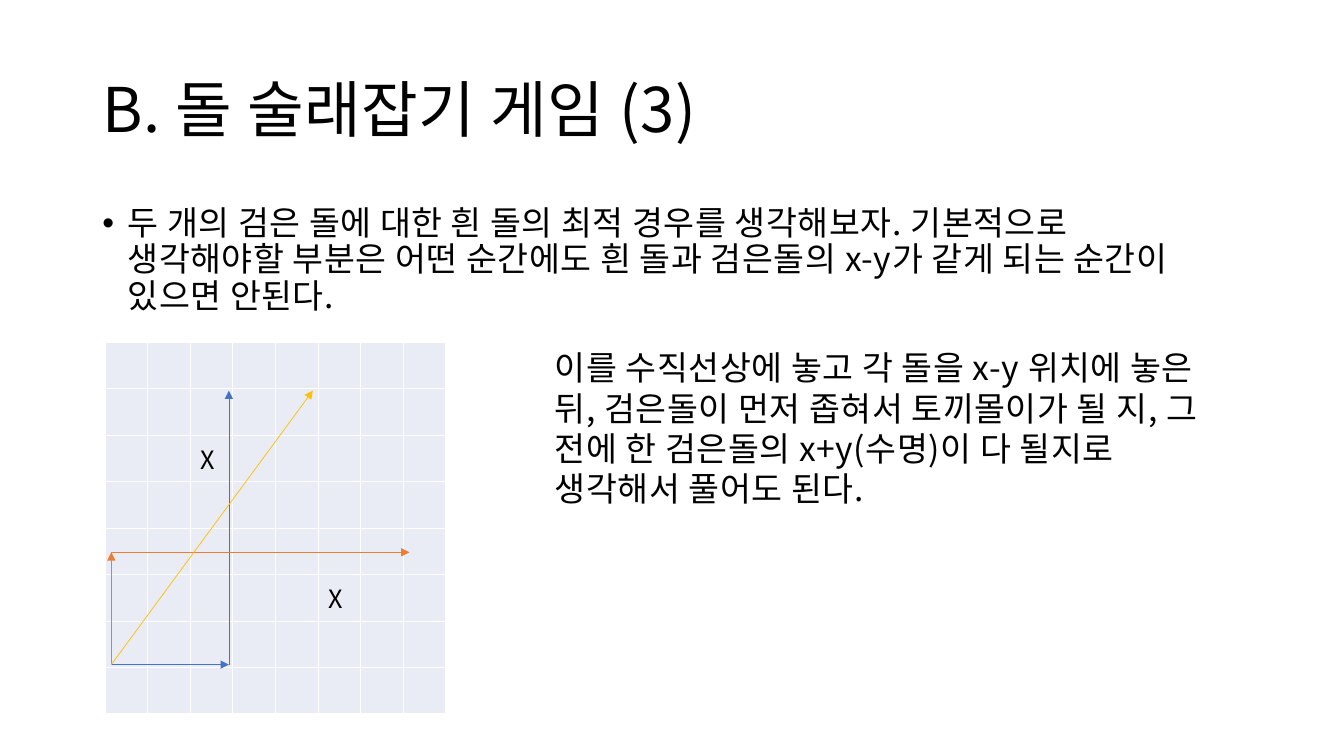
"""Build the slide on the stone tag game with its grid of moves."""
import dataclasses
import typing

import lxml.etree
import pptx
import pptx.dml.color
import pptx.enum.shapes
import pptx.enum.text
import pptx.oxml.ns
import pptx.util

EMU_PER_PX = 9525
FONT = "Noto Sans CJK KR"
LETTER_SPACING = "40"
COLORS = {
    "text": "000000",
    "cell": "E9EBF5",
    "border": "FFFFFF",
    "blue": "4472C4",
    "orange": "ED7D31",
    "yellow": "FFC000",
}
GRID_SIZE = 8
MARKED_CELLS = {(2, 2), (5, 5)}
START = (106, 633)
BLUE_TURN = (218, 633)
ORANGE_TURN = (106, 526)


@dataclasses.dataclass(frozen=True)
class Move:
    start: tuple[int, int]
    end: tuple[int, int]
    color: str


MOVES = (
    Move(START, BLUE_TURN, "blue"),
    Move(BLUE_TURN, (218, 372), "blue"),
    Move(START, ORANGE_TURN, "orange"),
    Move(ORANGE_TURN, (390, 526), "orange"),
    Move(START, (298, 372), "yellow"),
)


def px(length: int) -> pptx.util.Emu:
    return pptx.util.Emu(length * EMU_PER_PX)


def rgb(name: str) -> pptx.dml.color.RGBColor:
    return pptx.dml.color.RGBColor.from_string(COLORS[name])


def add_xml(parent: typing.Any, tag: str, **attributes: str) -> typing.Any:
    return lxml.etree.SubElement(parent, pptx.oxml.ns.qn(tag), attributes)


def write(frame: typing.Any, text: str, size: int) -> typing.Any:
    frame.text = text
    para = frame.paragraphs[0]
    para.alignment = pptx.enum.text.PP_ALIGN.LEFT
    para.font.size = pptx.util.Pt(size)
    para.font.name = FONT
    para.font.color.rgb = rgb("text")
    defaults = para._p.pPr.find(pptx.oxml.ns.qn("a:defRPr"))
    defaults.set("spc", LETTER_SPACING)
    add_xml(defaults, "a:ea", typeface=FONT)
    return para


def place(shape: typing.Any, left: int, top: int, width: int, height: int) -> None:
    shape.left, shape.top = px(left), px(top)
    shape.width, shape.height = px(width), px(height)


def fill_placeholders(page: typing.Any) -> None:
    title, body = page.placeholders
    place(title, 88, 38, 1104, 139)
    place(body, 88, 192, 1104, 457)
    heading = write(title.text_frame, "B. 돌 술래잡기 게임 (3)", 44)
    bullet = write(
        body.text_frame,
        "두 개의 검은 돌에 대한 흰 돌의 최적 경우를 생각해보자. 기본적으로 "
        "생각해야할 부분은 어떤 순간에도 흰 돌과 검은돌의 x-y가 같게 되는 "
        "순간이 있으면 안된다.",
        24,
    )
    for shape, para in ((title, heading), (body, bullet)):
        shape.text_frame.auto_size = pptx.enum.text.MSO_AUTO_SIZE.NONE
        para.line_spacing = 0.9
    title.text_frame.vertical_anchor = pptx.enum.text.MSO_ANCHOR.MIDDLE
    body.text_frame.margin_right = px(36)
    bullet.space_before = pptx.util.Pt(10)
    bullet._p.pPr.set("marL", str(px(24)))
    bullet._p.pPr.set("indent", str(px(-24)))


def add_borders(cell: typing.Any) -> None:
    properties = cell._tc.get_or_add_tcPr()
    for index, side in enumerate(("a:lnL", "a:lnR", "a:lnT", "a:lnB")):
        line = lxml.etree.Element(pptx.oxml.ns.qn(side), w=str(pptx.util.Pt(1)))
        add_xml(add_xml(line, "a:solidFill"), "a:srgbClr", val=COLORS["border"])
        properties.insert(index, line)


def add_grid(page: typing.Any) -> None:
    grid = page.shapes.add_table(
        GRID_SIZE, GRID_SIZE, px(100), px(326), px(325), px(354)
    ).table
    grid.first_row = False
    grid.horz_banding = False
    for row in range(GRID_SIZE):
        for column in range(GRID_SIZE):
            cell = grid.cell(row, column)
            cell.fill.solid()
            cell.fill.fore_color.rgb = rgb("cell")
            add_borders(cell)
            if (row, column) in MARKED_CELLS:
                write(cell.text_frame, "X", 18)


def add_move(page: typing.Any, move: Move) -> None:
    arrow = page.shapes.add_connector(
        pptx.enum.shapes.MSO_CONNECTOR.STRAIGHT,
        *map(px, move.start + move.end),
    )
    arrow.line.color.rgb = rgb(move.color)
    arrow.line.width = pptx.util.Pt(0.5)
    add_xml(arrow.line._get_or_add_ln(), "a:tailEnd", type="triangle")
    add_xml(arrow._element.spPr, "a:effectLst")


def add_explanation(page: typing.Any) -> None:
    box = page.shapes.add_textbox(px(519), px(326), px(634), px(165))
    box.text_frame.word_wrap = True
    box.text_frame.auto_size = pptx.enum.text.MSO_AUTO_SIZE.SHAPE_TO_FIT_TEXT
    write(
        box.text_frame,
        "이를 수직선상에 놓고 각 돌을 x-y 위치에 놓은 뒤, 검은돌이 먼저 "
        "좁혀서 토끼몰이가 될 지, 그 전에 한 검은돌의 x+y(수명)이 다 될지로 "
        "생각해서 풀어도 된다.",
        24,
    )


def main() -> None:
    deck = pptx.Presentation()
    deck.slide_width, deck.slide_height = px(1280), px(720)
    page = deck.slides.add_slide(deck.slide_layouts[1])
    fill_placeholders(page)
    add_grid(page)
    for move in MOVES:
        add_move(page, move)
    add_explanation(page)
    deck.save("out.pptx")


if __name__ == "__main__":
    main()
